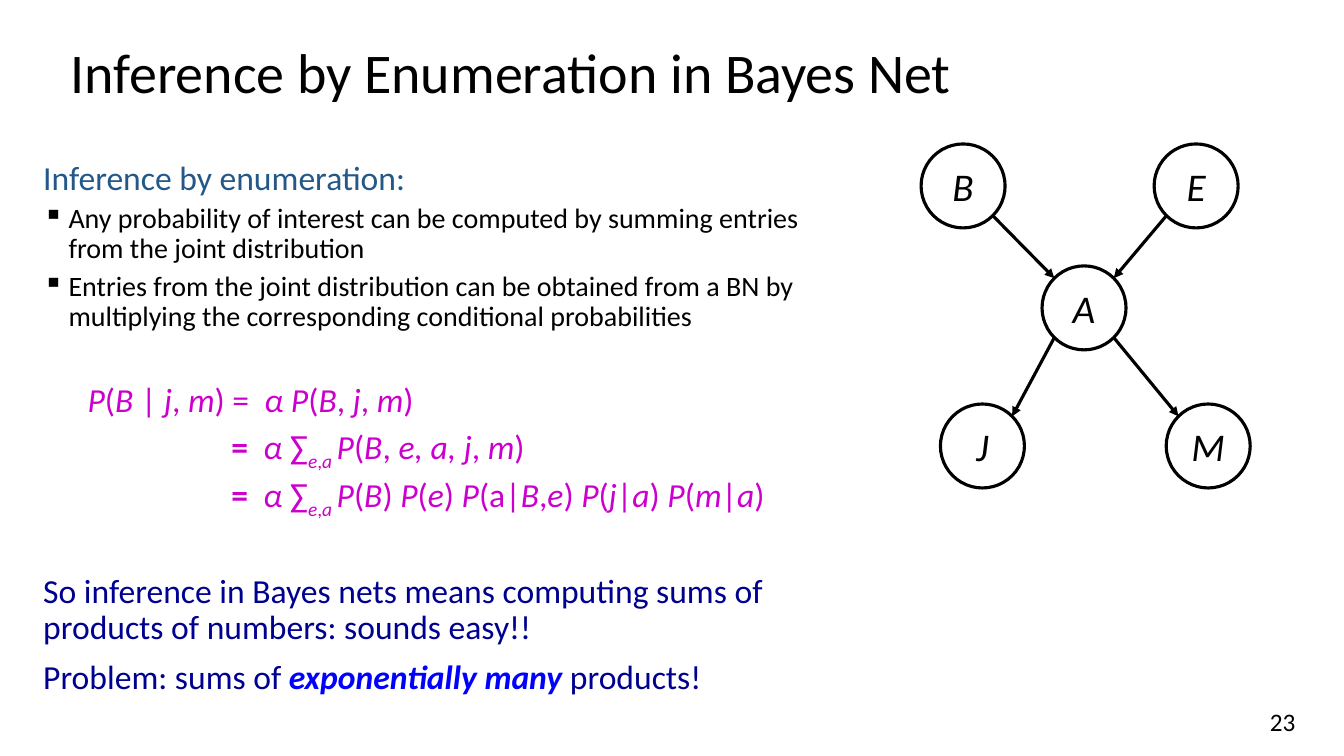
from dataclasses import dataclass
from itertools import groupby
from math import sqrt

from lxml.etree import SubElement
from pptx import Presentation
from pptx.dml.color import RGBColor as Color
from pptx.enum.shapes import MSO_CONNECTOR as Connector, MSO_SHAPE as Preset
from pptx.enum.text import MSO_ANCHOR as Anchor, MSO_AUTO_SIZE as AutoSize, PP_ALIGN as Align
from pptx.oxml.ns import qn
from pptx.util import Inches, Pt


@dataclass(frozen=True)
class Theme:
    font: str = "Calibri"
    black: str = "000000"
    white: str = "FFFFFF"
    heading: str = "235888"
    formula: str = "CC00CC"
    closing: str = "000090"
    emphasis: str = "0000FF"
    title_size: int = 40
    node_size: int = 28
    text_size: int = 24
    bullet_size: int = 20
    number_size: int = 18
    line_width: float = 2.25


theme = Theme()
presentation = Presentation()
presentation.slide_width = Inches(13.33)
presentation.slide_height = Inches(7.5)
column = presentation.slide_width / 100
row = presentation.slide_height / 100


def format_run(run, size, color):
    run.font.name = theme.font
    run.font.size = Pt(size)
    run.font.color.rgb = Color.from_string(color)


def add_marked_runs(paragraph, markup, size, color):
    """Marks switch a style on and off: * italic, # bold, _ subscript, ~ wide spacing, ^ emphasis."""
    active, styled = frozenset(), []
    for character in markup:
        if character in "*#_~^":
            active ^= {character}
        else:
            styled.append((active, character))
    for marks, group in groupby(styled, key=lambda pair: pair[0]):
        run = paragraph.add_run()
        run.text = "".join(character for _, character in group)
        format_run(run, size, theme.emphasis if "^" in marks else color)
        run.font.italic = "*" in marks
        run.font.bold = "#" in marks
        properties = run.font._element
        if "_" in marks:
            properties.set("baseline", "-25000")
        if "~" in marks:
            properties.set("spc", "270")


slide = presentation.slides.add_slide(presentation.slide_layouts[5])

# Title
title = slide.shapes.title
title.left, title.top = round(4.5 * column), round(5.33 * row)
title.width, title.height = round(86.25 * column), round(9.2 * row)
title.text_frame.text = "Inference by Enumeration in Bayes Net"
title.text_frame.auto_size = AutoSize.NONE
title.text_frame.vertical_anchor = Anchor.MIDDLE
heading = title.text_frame.paragraphs[0]
heading.alignment = Align.LEFT
heading.line_spacing = 0.9
format_run(heading.runs[0], theme.title_size, theme.black)

# Explanation: markup, size, colour, space before, indent in columns, bullet
heading_style = (theme.text_size, theme.heading)
bullet_style = (theme.bullet_size, theme.black)
formula_style = (theme.text_size, theme.formula)
closing_style = (theme.text_size, theme.closing)
explanation = [
    ("Inference by enumeration:", heading_style, 0, 0, False),
    ("Any probability of interest can be computed by summing entries from the joint distribution",
     bullet_style, 5, 1.88, True),
    ("Entries from the joint distribution can be obtained from a BN by multiplying "
     "the corresponding conditional probabilities", bullet_style, 5, 1.88, True),
    ("*P*(*B* | *j*,* m*) ~= ~*α P*(*B*, *j*,* m*)", formula_style, 36.4, 3.3, False),
    ("~#= #~*α *∑_*e*,*a *_*P*(*B*, *e, a, j*,* m*)", formula_style, 5, 14, False),
    ("~#= #~*α *∑_*e*,*a *_*P*(*B*) *P*(*e*) *P*(a|*B*,*e*) *P*(*j*|*a*)* P*(*m*|*a*)",
     formula_style, 5, 14, False),
    ("So inference in Bayes nets means computing sums of products of numbers: sounds easy!!",
     closing_style, 41.4, 0, False),
    ("Problem: sums of ^#*exponentially many*#^ products!", closing_style, 10, 0, False),
]
body = slide.shapes.add_textbox(
    round(2.48 * column), round(20.67 * row), round(60.6 * column), round(79.33 * row))
body.text_frame.word_wrap = True
for index, (markup, style, space_before, indent, bulleted) in enumerate(explanation):
    paragraph = body.text_frame.add_paragraph() if index else body.text_frame.paragraphs[0]
    paragraph.line_spacing = 0.9
    paragraph.space_before = Pt(space_before)
    properties = paragraph._p.get_or_add_pPr()
    properties.set("marL", str(round(indent * column)))
    if bulleted:
        properties.set("indent", str(-round(indent * column)))
        SubElement(properties, qn("a:buChar")).set("char", "▪")
    add_marked_runs(paragraph, markup, *style)

# Bayes net: node centres in columns and rows
centres = {"B": (71.66, 24.6), "E": (89, 24.6), "A": (80.66, 40.73),
           "M": (89.9, 59), "J": (73.1, 59)}
diameter = 6.25 * column
for name, (x, y) in centres.items():
    node = slide.shapes.add_shape(
        Preset.OVAL, round(x * column - diameter / 2), round(y * row - diameter / 2),
        round(diameter), round(diameter))
    node.shadow.inherit = False
    node.fill.solid()
    node.fill.fore_color.rgb = Color.from_string(theme.white)
    node.line.color.rgb = Color.from_string(theme.black)
    node.line.width = Pt(theme.line_width)
    node.text_frame.text = name
    node.text_frame.word_wrap = False
    node.text_frame.vertical_anchor = Anchor.MIDDLE
    label = node.text_frame.paragraphs[0]
    label.alignment = Align.CENTER
    format_run(label.runs[0], theme.node_size, theme.black)
    label.runs[0].font.italic = True

# Every arrow runs downwards between the diagonal points of two circles
reach = diameter / 2 / sqrt(2)
for parent, child in ("AM", "AJ", "EA", "BA"):
    (start_x, start_y), (end_x, end_y) = centres[parent], centres[child]
    sideways = reach if end_x > start_x else -reach
    arrow = slide.shapes.add_connector(
        Connector.STRAIGHT,
        round(start_x * column + sideways), round(start_y * row + reach),
        round(end_x * column - sideways), round(end_y * row - reach))
    arrow.line.color.rgb = Color.from_string(theme.black)
    arrow.line.width = Pt(theme.line_width)
    SubElement(arrow.line._get_or_add_ln(), qn("a:tailEnd")).set("type", "triangle")
    SubElement(arrow._element.spPr, qn("a:effectLst"))

# Slide number
number = slide.shapes.add_textbox(
    round(74.63 * column), round(92.8 * row), round(22.5 * column), round(5.33 * row))
number.text_frame.text = "23"
number.text_frame.word_wrap = True
number_paragraph = number.text_frame.paragraphs[0]
number_paragraph.alignment = Align.RIGHT
format_run(number_paragraph.runs[0], theme.number_size, theme.black)

presentation.save("out.pptx")
